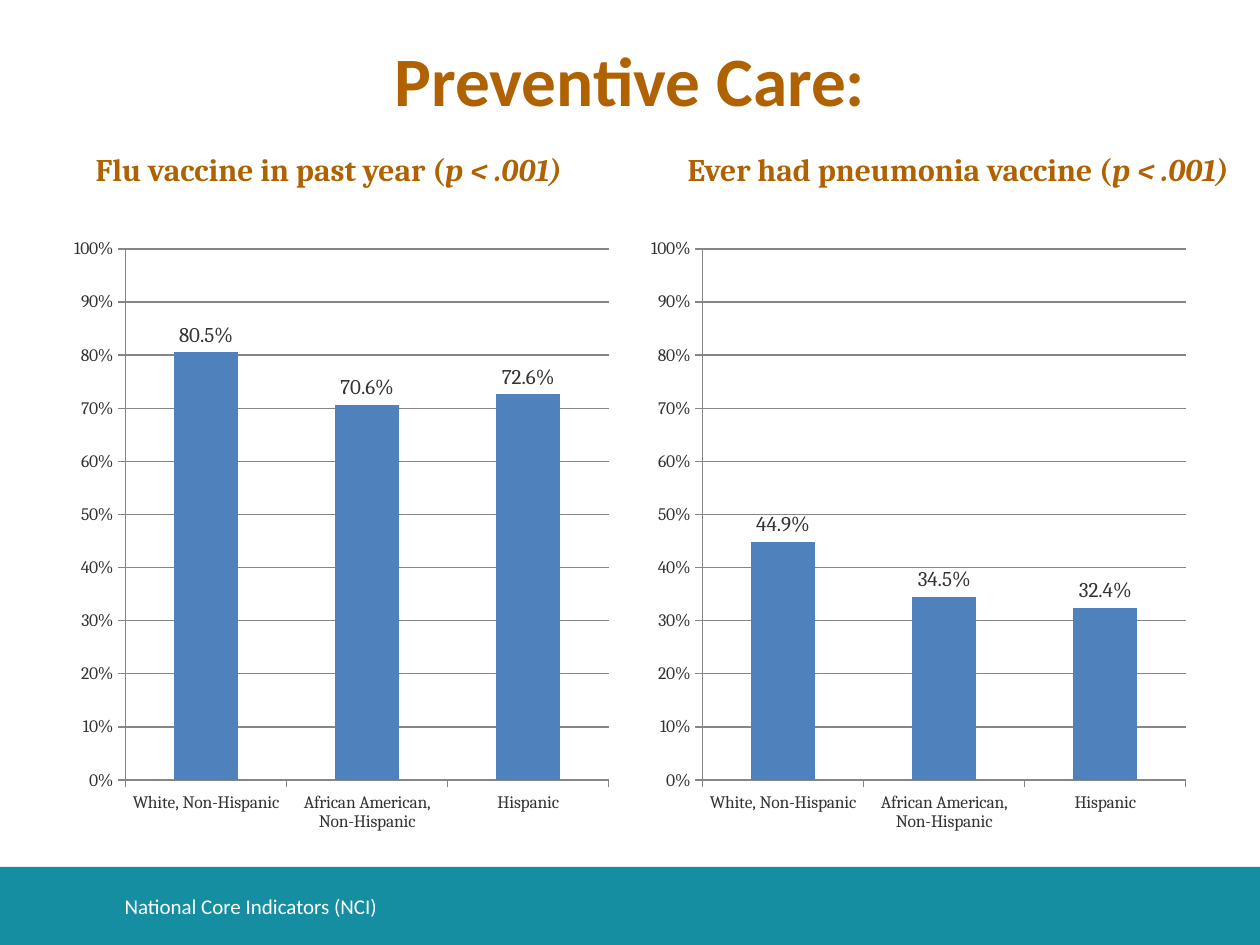
"""Build the preventive care slide with two vaccine charts."""
import pptx
import pptx.chart.data
import pptx.dml.color
import pptx.enum.chart
import pptx.enum.shapes
import pptx.enum.text
import pptx.util

Inches = pptx.util.Inches
Pt = pptx.util.Pt
RGBColor = pptx.dml.color.RGBColor
Anchor = pptx.enum.text.MSO_ANCHOR
Align = pptx.enum.text.PP_ALIGN
Tick = pptx.enum.chart.XL_TICK_MARK

TEAL = RGBColor(0x16, 0x8E, 0xA2)
BROWN = RGBColor(0xB0, 0x61, 0x00)
WHITE = RGBColor(0xFF, 0xFF, 0xFF)
BLUE = RGBColor(0x4F, 0x81, 0xBD)
INK = RGBColor(0x33, 0x33, 0x33)
GRAY = RGBColor(0x86, 0x86, 0x86)

TITLE = "Preventive Care:"
FOOTER = "National Core Indicators (NCI)"
GROUPS = ["White, Non-Hispanic", "African American, Non-Hispanic", "Hispanic"]
PANELS = [
    {"head": "Flu vaccine in past year (", "box": (0.66, 1, 4.42, 0.54),
     "vals": [0.805, 0.706, 0.726]},
    {"head": "Ever had pneumonia vaccine (", "box": (5.36, 0.84, 4.64, 0.7),
     "vals": [0.449, 0.345, 0.324]},
]
PVALUE = "p < .001)"
EDGE, TOP, WIDE, HIGH = 0.5, 1.8, 4.42, 4.9


def add_text(slide, box, runs, size, face, color, bold=False,
             anchor=Anchor.MIDDLE, align=Align.LEFT):
    """Add a text box from (text, italic) runs."""
    frame = slide.shapes.add_textbox(*map(Inches, box)).text_frame
    frame.word_wrap = True
    frame.vertical_anchor = anchor
    para = frame.paragraphs[0]
    para.alignment = align
    for text, slant in runs:
        run = para.add_run()
        run.text = text
        font = run.font
        font.size, font.name = Pt(size), face
        font.bold, font.italic = bold, slant
        font.color.rgb = color


def add_bars(slide, left, vals):
    """Add one column chart of rates by group."""
    data = pptx.chart.data.CategoryChartData()
    data.categories = GROUPS
    data.add_series("Series 1", vals)
    chart = slide.shapes.add_chart(
        pptx.enum.chart.XL_CHART_TYPE.COLUMN_CLUSTERED,
        *map(Inches, (left, TOP, WIDE, HIGH)), data).chart
    chart.has_title = chart.has_legend = False
    chart.font.size, chart.font.name = Pt(10), "Cambria"
    chart.font.color.rgb = INK

    rates = chart.value_axis
    rates.minimum_scale, rates.maximum_scale = 0, 1
    rates.major_unit = 0.1
    rates.has_major_gridlines = True
    rates.tick_labels.number_format = "0%"
    rates.tick_labels.number_format_is_linked = False
    for axis in (rates, chart.category_axis):
        axis.major_tick_mark = Tick.CROSS if axis is rates else Tick.OUTSIDE
        axis.minor_tick_mark = Tick.NONE
    for holder in (rates, chart.category_axis, rates.major_gridlines):
        holder.format.line.color.rgb = GRAY
        holder.format.line.width = Pt(0.75)

    plot = chart.plots[0]
    plot.vary_by_categories = False
    plot.gap_width = 150
    bars = plot.series[0]
    bars.format.fill.solid()
    bars.format.fill.fore_color.rgb = BLUE
    labels = bars.data_labels
    labels.show_value = True
    labels.number_format = "0.0%"
    labels.number_format_is_linked = False
    labels.position = pptx.enum.chart.XL_LABEL_POSITION.OUTSIDE_END
    labels.font.size, labels.font.name = Pt(12), "Cambria"
    labels.font.color.rgb = INK


def main():
    """Lay out the slide and save it."""
    deck = pptx.Presentation()
    deck.slide_width, deck.slide_height = Inches(10), Inches(7.5)
    slide = deck.slides.add_slide(deck.slide_layouts[6])

    band = slide.shapes.add_shape(
        pptx.enum.shapes.MSO_SHAPE.RECTANGLE,
        *map(Inches, (0, 6.88, 10, 0.62)))
    band.shadow.inherit = False
    band.fill.solid()
    band.fill.fore_color.rgb = TEAL
    band.line.fill.background()

    add_text(slide, (0.89, 6.99, 7.4, 0.4), [(FOOTER, False)],
             12, "Calibri", WHITE)
    add_text(slide, (0.5, 0.24, 9, 0.77), [(TITLE, False)],
             39.6, "Calibri", BROWN, bold=True, align=Align.CENTER)
    gap = 10 - 2 * EDGE - 2 * WIDE
    for i, panel in enumerate(PANELS):
        add_text(slide, panel["box"], [(panel["head"], False), (PVALUE, True)],
                 18, "Cambria", BROWN, bold=True, anchor=Anchor.BOTTOM)
        add_bars(slide, EDGE + i * (WIDE + gap), panel["vals"])
    deck.save("out.pptx")


if __name__ == "__main__":
    main()
